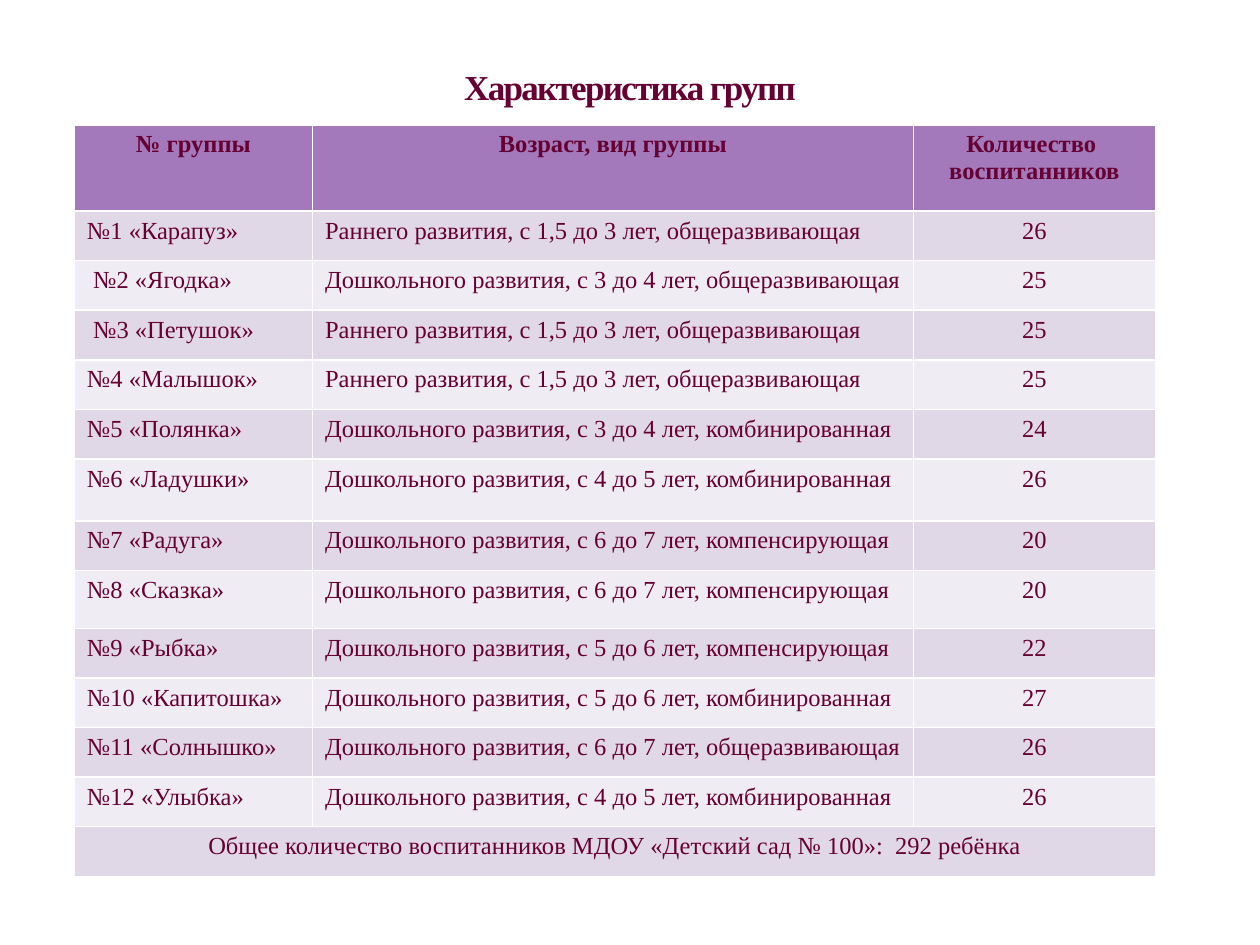
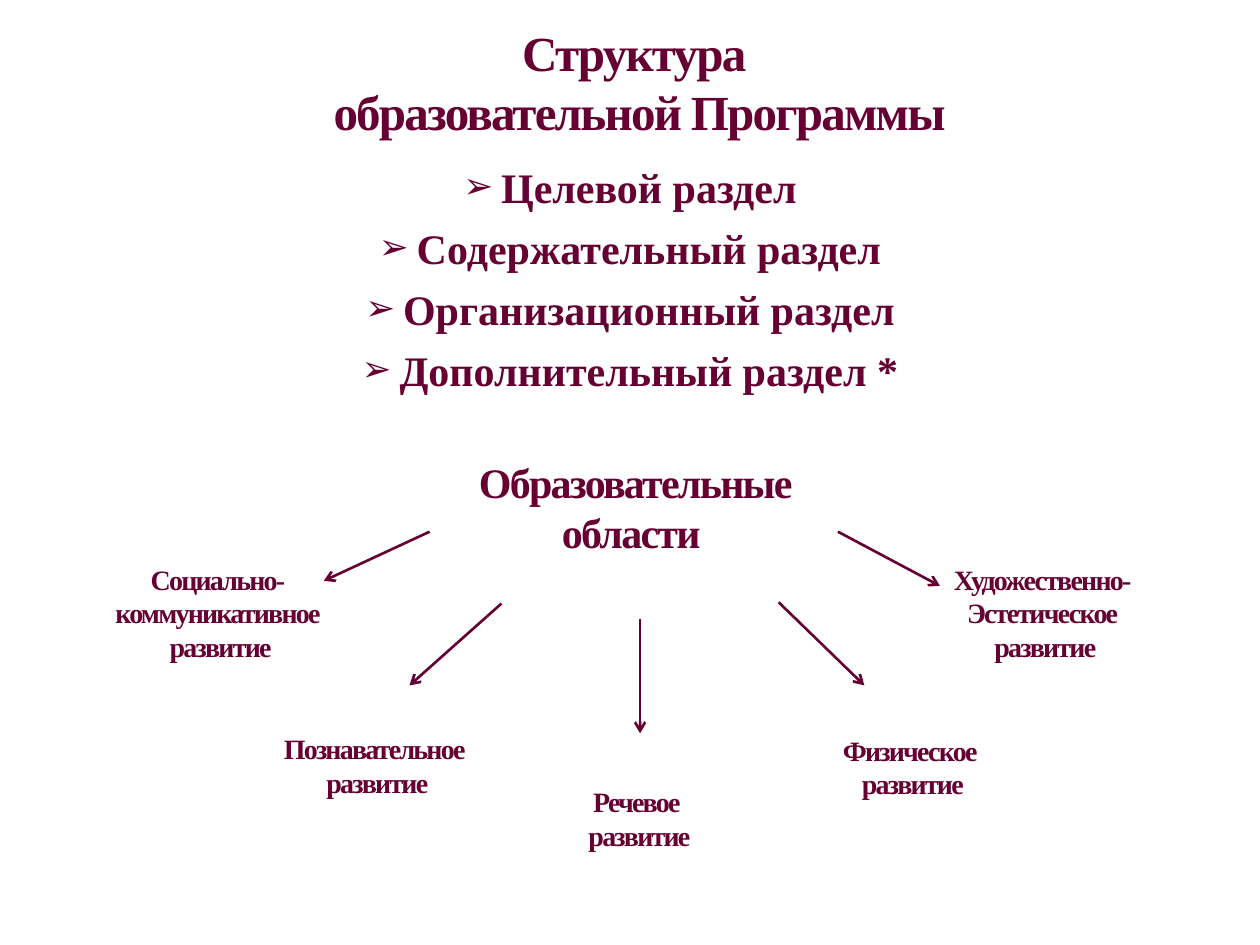
"""Build two slides: kindergarten groups and the structure of the programme."""
from lxml.etree import SubElement
from pptx import Presentation
from pptx.dml.color import RGBColor
from pptx.enum.shapes import MSO_CONNECTOR
from pptx.enum.text import MSO_ANCHOR, MSO_AUTO_SIZE, PP_ALIGN
from pptx.oxml.ns import qn
from pptx.util import Inches, Pt

WINE = RGBColor(0x66, 0x00, 0x33)
HEADER_FILL = RGBColor(0xA3, 0x79, 0xBB)
BAND_FILLS = [RGBColor(0xF0, 0xEC, 0xF3), RGBColor(0xE0, 0xD7, 0xE7)]
FONT = "Times New Roman"

presentation = Presentation()
presentation.slide_width = Inches(10)
presentation.slide_height = Inches(7.5)
UNIT = presentation.slide_width // 100


def write(frame, text, size, alignment=PP_ALIGN.CENTER, bold=True, tracking=0):
    """Put text into a frame and format every run."""
    frame.text = text
    for paragraph in frame.paragraphs:
        paragraph.alignment = alignment
        for run in paragraph.runs:
            run.font.name = FONT
            run.font.size = Pt(size)
            run.font.bold = bold
            run.font.color.rgb = WINE
            if tracking:
                run.font._element.set("spc", str(tracking))


def place(shape, column, row, columns, rows, anchor=MSO_ANCHOR.BOTTOM):
    """Set a shape on the grid and fix how its text sits."""
    shape.left, shape.top = int(column * UNIT), int(row * UNIT)
    shape.width, shape.height = int(columns * UNIT), int(rows * UNIT)
    shape.text_frame.word_wrap = True
    shape.text_frame.auto_size = MSO_AUTO_SIZE.NONE
    shape.text_frame.vertical_anchor = anchor


EARLY = "Раннего развития, с 1,5 до 3 лет, "
PRESCHOOL = "Дошкольного развития, с {} лет, "
GENERAL, COMBINED, COMPENSATING = "общеразвивающая", "комбинированная", "компенсирующая"
groups = [
    ("№1 «Карапуз»", EARLY + GENERAL, 26),
    (" №2 «Ягодка»", PRESCHOOL.format("3 до 4") + GENERAL, 25),
    (" №3 «Петушок»", EARLY + GENERAL, 25),
    ("№4 «Малышок»", EARLY + GENERAL, 25),
    ("№5 «Полянка»", PRESCHOOL.format("3 до 4") + COMBINED, 24),
    ("№6 «Ладушки»", PRESCHOOL.format("4 до 5") + COMBINED, 26),
    ("№7 «Радуга»", PRESCHOOL.format("6 до 7") + COMPENSATING, 20),
    ("№8 «Сказка»", PRESCHOOL.format("6 до 7") + COMPENSATING, 20),
    ("№9 «Рыбка»", PRESCHOOL.format("5 до 6") + COMPENSATING, 22),
    ("№10 «Капитошка»", PRESCHOOL.format("5 до 6") + COMBINED, 27),
    ("№11 «Солнышко»", PRESCHOOL.format("6 до 7") + GENERAL, 26),
    ("№12 «Улыбка»", PRESCHOOL.format("4 до 5") + COMBINED, 26),
]
header = ("№ группы", "Возраст, вид группы", "Количество \nвоспитанников")
total = f"Общее количество воспитанников МДОУ «Детский сад № 100»:  {sum(group[2] for group in groups)} ребёнка"
table_rows = [header, *groups, (total, "", "")]
column_widths = [18.9, 47.7, 19.2]
row_heights = {0: 6.85, 6: 4.9, 8: 4.6}

slide = presentation.slides.add_slide(presentation.slide_layouts[5])
place(slide.shapes.title, 0, 2.3, 100, 6.7)
write(slide.shapes.title.text_frame, "Характеристика групп", 20, tracking=-100)
table = slide.shapes.add_table(
    len(table_rows), len(header), int(5.9 * UNIT), int(9.9 * UNIT),
    int(sum(column_widths) * UNIT), int(59.7 * UNIT)).table
for column, width in zip(table.columns, column_widths):
    column.width = int(width * UNIT)
for row_index, values in enumerate(table_rows):
    table.rows[row_index].height = int(row_heights.get(row_index, 3.94) * UNIT)
    is_header = row_index == 0
    is_total = values[0] == total
    for column_index, value in enumerate(values):
        cell = table.cell(row_index, column_index)
        cell.fill.solid()
        cell.fill.fore_color.rgb = HEADER_FILL if is_header else BAND_FILLS[row_index % 2]
        centred = is_header or is_total or column_index == 2
        write(cell.text_frame, str(value), 14,
              PP_ALIGN.CENTER if centred else PP_ALIGN.LEFT, bold=is_header)
last_row = len(table_rows) - 1
table.cell(last_row, 0).merge(table.cell(last_row, len(header) - 1))

slide = presentation.slides.add_slide(presentation.slide_layouts[1])
place(slide.shapes.title, 5, 2.9, 91.5, 8.7)
write(slide.shapes.title.text_frame, "Структура \vобразовательной Программы", 28, tracking=-100)

sections = slide.placeholders[1]
place(sections, 24, 12.3, 52, 21, MSO_ANCHOR.TOP)
write(sections.text_frame, "\n".join(
    f"{name} раздел" for name in ("Целевой", "Содержательный", "Организационный", "Дополнительный")
) + " *", 24)
for paragraph in sections.text_frame.paragraphs:
    paragraph.space_before = Pt(6)
    properties = paragraph._p.get_or_add_pPr()
    properties.set("marL", str(3 * UNIT))
    properties.set("indent", str(-3 * UNIT))
    SubElement(SubElement(properties, qn("a:buClr")), qn("a:srgbClr"), val=str(WINE))
    SubElement(properties, qn("a:buSzPct"), val="85000")
    SubElement(properties, qn("a:buChar"), char="➢")

areas = [
    ("Образовательные \nобласти  ", 24, 35.6, 35, 30.4, 9.7),
    ("Социально-\nкоммуникативное\n развитие", 16, 5.9, 45.2, 22.8, 7.9),
    ("Познавательное \nразвитие", 16, 19.3, 58.4, 21.3, 5.5),
    ("Художественно-\nЭстетическое\n развитие", 16, 72.5, 44.6, 20.5, 8.5),
    ("Физическое \nразвитие", 16, 63.8, 58.5, 17.3, 5.5),
    ("Речевое \nразвитие", 16, 42.5, 62.6, 16.5, 5.5),
]
for text, size, *position in areas:
    text_box = slide.shapes.add_textbox(0, 0, UNIT, UNIT)
    place(text_box, *position)
    write(text_box.text_frame, text, size, tracking=-100)

arrows = [
    (34.1, 42.2, 25.7, 46.1),
    (61.8, 47.8, 68.6, 54.4),
    (39.8, 47.9, 32.5, 54.4),
    (50.8, 49.1, 50.8, 58.2),
    (66.5, 42.2, 74.6, 46.5),
]
for ends in arrows:
    arrow = slide.shapes.add_connector(MSO_CONNECTOR.STRAIGHT, *(int(end * UNIT) for end in ends))
    arrow.line.color.rgb = WINE
    arrow.line.width = Pt(1.5)
    SubElement(arrow.line._get_or_add_ln(), qn("a:tailEnd"), type="arrow")
    SubElement(arrow._element.spPr, qn("a:effectLst"))

presentation.save("out.pptx")
